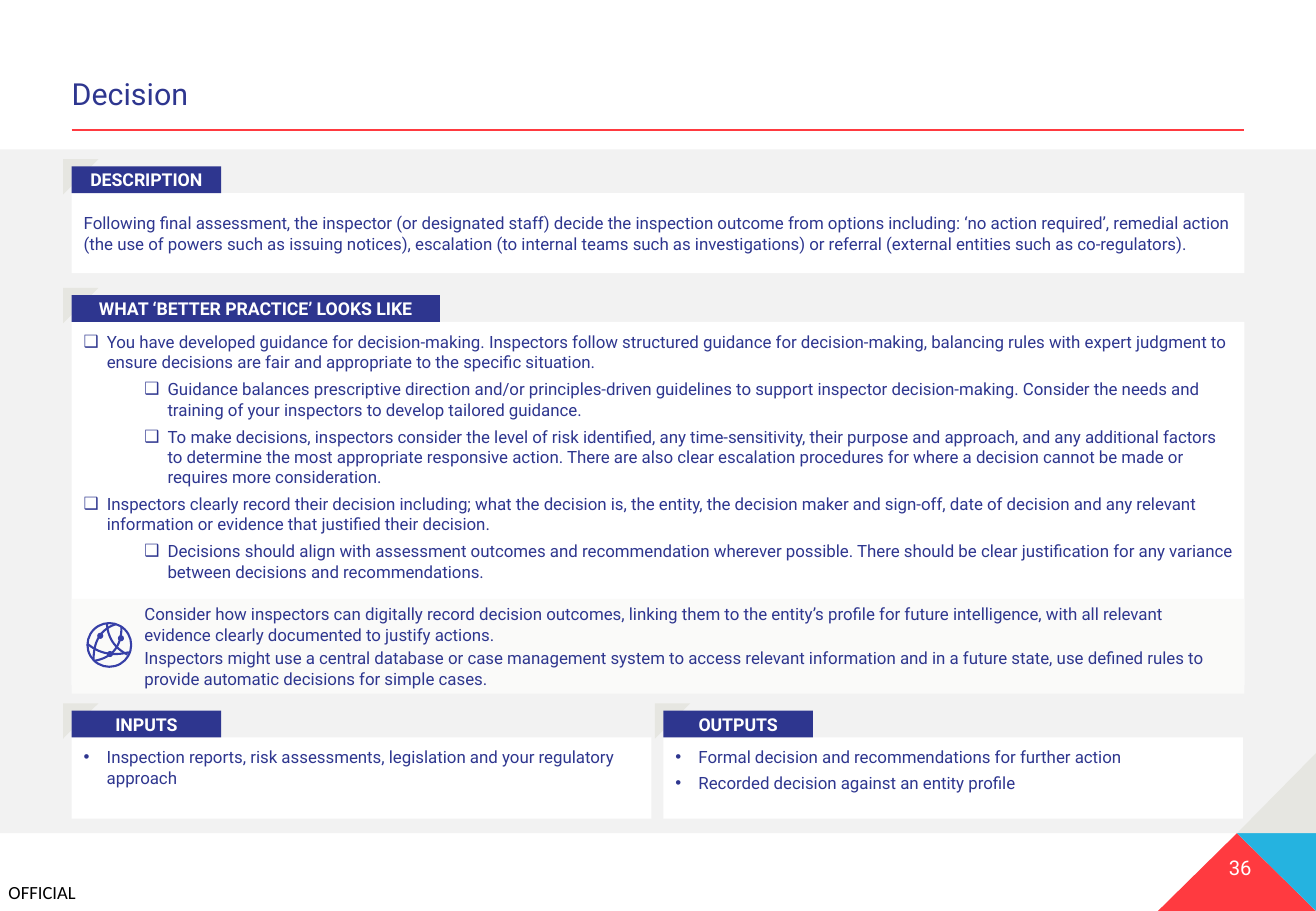
from dataclasses import dataclass

from lxml.etree import SubElement as Sub
from pptx import Presentation
from pptx.dml.color import RGBColor as Rgb
from pptx.enum.shapes import MSO_CONNECTOR as Link, MSO_SHAPE as Form
from pptx.enum.text import MSO_ANCHOR as Anchor, PP_ALIGN as Align
from pptx.oxml.ns import qn
from pptx.shapes.autoshape import Shape
from pptx.shapes.shapetree import SlideShapes as Shapes
from pptx.text.text import TextFrame as Frame
from pptx.util import Inches, Pt

Point = tuple[float, float]
Box = tuple[float, float, float, float]


@dataclass(frozen=True)
class Theme:
    navy: str = "2E368F"
    icon: str = "363FA7"
    red: str = "FF3A40"
    cyan: str = "25B3E0"
    stone: str = "E6E6E1"
    grey: str = "F2F2F2"
    pale: str = "FAFAF9"
    white: str = "FFFFFF"
    black: str = "000000"
    font: str = "Roboto"
    plain: str = "Calibri"
    title: float = 18
    page: float = 12
    mark: float = 11
    tag: float = 10.5
    body: float = 10


@dataclass(frozen=True)
class Style:
    size: float
    color: str
    font: str = "Roboto"
    bold: bool = False


@dataclass(frozen=True)
class Item:
    text: str
    bullet: str = ""
    level: int = 0
    left: float = 0
    hang: float = 0
    before: float = 0
    after: float = 0
    align: Align = Align.LEFT


@dataclass(frozen=True)
class Panel:
    name: str
    x: float
    y: float
    tag: float
    width: float
    height: float
    items: list[Item]
    anchor: Anchor = Anchor.TOP


T = Theme()
BODY = Style(T.body, T.navy)
LEFT, WIDE, HALF, RIGHT = 0.59, 9.65, 4.77, 5.46
TAG_H = 0.22
EDGE, TOP, BASE, SIDE = 10.83, 6.86, 7.5, 10.18


def check(text: str, level: int = 0) -> Item:
    return Item(text, "❑", level, 0.19 + level * 0.5, -0.19, before=4)


def point(text: str) -> Item:
    return Item(text, "•", 0, 0.19, -0.19, after=3)


def note(text: str) -> Item:
    return Item(text, level=1, left=0.5, after=2)


PANELS = [
    Panel("DESCRIPTION", LEFT, 1.37, 1.23, WIDE, 0.66, [
        Item("Following final assessment, the inspector (or designated staff) decide the inspection outcome from options including: ‘no action required’, remedial action (the use of powers such as issuing notices), escalation (to internal teams such as investigations) or referral (external entities such as co-regulators).", after=3),
    ], Anchor.MIDDLE),
    Panel("WHAT ‘BETTER PRACTICE’ LOOKS LIKE", LEFT, 2.43, 3.03, WIDE, 2.99, [
        check("You have developed guidance for decision-making. Inspectors follow structured guidance for decision-making, balancing rules with expert judgment to ensure decisions are fair and appropriate to the specific situation."),
        check("Guidance balances prescriptive direction and/or principles-driven guidelines to support inspector decision-making. Consider the needs and training of your inspectors to develop tailored guidance.", 1),
        check("To make decisions, inspectors consider the level of risk identified, any time-sensitivity, their purpose and approach, and any additional factors to determine the most appropriate responsive action. There are also clear escalation procedures for where a decision cannot be made or requires more consideration.", 1),
        check("Inspectors clearly record their decision including; what the decision is, the entity, the decision maker and sign-off, date of decision and any relevant information or evidence that justified their decision."),
        check("Decisions should align with assessment outcomes and recommendation wherever possible. There should be clear justification for any variance between decisions and recommendations.", 1),
    ]),
    Panel("INPUTS", LEFT, 5.85, 1.23, HALF, 0.67, [
        point("Inspection reports, risk assessments, legislation and your regulatory approach"),
    ]),
    Panel("OUTPUTS", RIGHT, 5.85, 1.23, HALF, 0.67, [
        point("Formal decision and recommendations for further action"),
        point("Recorded decision against an entity profile"),
    ]),
]
NOTES = [
    note("Consider how inspectors can digitally record decision outcomes, linking them to the entity’s profile for future intelligence, with all relevant evidence clearly documented to justify actions."),
    note("Inspectors might use a central database or case management system to access relevant information and in a future state, use defined rules to provide automatic decisions for simple cases."),
]
CORNER = [
    (T.red, [(SIDE, TOP), (9.53, BASE), (EDGE, BASE)]),
    (T.cyan, [(EDGE, TOP), (SIDE, TOP), (EDGE, BASE)]),
    (T.stone, [(EDGE, 6.2), (SIDE, TOP), (EDGE, TOP)]),
]
ARCS = [
    [(0.95, 5.14), (0.77, 5.2), (0.77, 5.43)],
    [(1.0, 5.16), (1.0, 5.4), (0.78, 5.44)],
    [(0.72, 5.3), (0.86, 5.42), (1.06, 5.37)],
    [(0.88, 5.13), (0.89, 5.31), (1.05, 5.39)],
]
DOTS = [(0.82, 5.23), (0.99, 5.25), (0.9, 5.38)]


def write(frame: Frame, items: list[Item], style: Style, anchor: Anchor, pad: Point) -> None:
    frame.word_wrap = True
    frame.vertical_anchor = anchor
    frame.margin_left = frame.margin_right = Inches(pad[0])
    frame.margin_top = frame.margin_bottom = Inches(pad[1])
    for num, item in enumerate(items):
        para = frame.add_paragraph() if num else frame.paragraphs[0]
        para.text = item.text
        para.level = item.level
        para.alignment = item.align
        para.space_before = Pt(item.before if num else 0)
        para.space_after = Pt(item.after)
        props = para._p.get_or_add_pPr()
        props.set("marL", str(Inches(item.left)))
        props.set("indent", str(Inches(item.hang)))
        if item.bullet:
            Sub(props, qn("a:buFont")).set("typeface", "Arial")
            Sub(props, qn("a:buChar")).set("char", item.bullet)
        for run in para.runs:
            run.font.name = style.font
            run.font.size = Pt(style.size)
            run.font.bold = style.bold
            run.font.color.rgb = Rgb.from_string(style.color)


def paint(shape: Shape, fill: str = "", line: str = "") -> Shape:
    shape.shadow.inherit = False
    if fill:
        shape.fill.solid()
        shape.fill.fore_color.rgb = Rgb.from_string(fill)
    else:
        shape.fill.background()
    if line:
        shape.line.color.rgb = Rgb.from_string(line)
        shape.line.width = Pt(1.25)
    else:
        shape.line.fill.background()
    return shape


def draw(shapes: Shapes, form: Form, box: Box, fill: str = "", line: str = "") -> Shape:
    return paint(shapes.add_shape(form, *map(Inches, box)), fill, line)


def trace(shapes: Shapes, points: list[Point], fill: str = "", line: str = "") -> Shape:
    first, *rest = [(Inches(x), Inches(y)) for x, y in points]
    path = shapes.build_freeform(*first)
    path.add_line_segments(rest, close=bool(fill))
    return paint(path.convert_to_shape(), fill, line)


def label(shapes: Shapes, box: Box, item: Item, style: Style, anchor: Anchor, pad: float) -> Frame:
    frame = shapes.add_textbox(*map(Inches, box)).text_frame
    write(frame, [item], style, anchor, (0, pad))
    return frame


def curve(start: Point, bend: Point, end: Point, steps: int = 16) -> list[Point]:
    parts = [num / steps for num in range(steps + 1)]
    return [tuple((1 - t) ** 2 * a + 2 * t * (1 - t) * b + t * t * c
                  for a, b, c in zip(start, bend, end)) for t in parts]


def section(shapes: Shapes, panel: Panel) -> None:
    box = (panel.x, panel.y + TAG_H, panel.width, panel.height)
    body = draw(shapes, Form.RECTANGLE, box, T.white)
    write(body.text_frame, panel.items, BODY, panel.anchor, (0.1, 0.08))
    half = draw(shapes, Form.HALF_FRAME, (panel.x - 0.07, panel.y - 0.06, 0.29, 0.29), T.stone)
    half.adjustments[0] = half.adjustments[1] = 0.238
    tag = draw(shapes, Form.RECTANGLE, (panel.x, panel.y, panel.tag, TAG_H), T.navy)
    write(tag.text_frame, [Item(panel.name, align=Align.CENTER)],
          Style(T.tag, T.white, bold=True), Anchor.MIDDLE, (0.1, 0.05))


def globe(shapes: Shapes) -> None:
    draw(shapes, Form.OVAL, (0.72, 5.13, 0.36, 0.36), line=T.icon)
    for arc in ARCS:
        trace(shapes, curve(*arc), line=T.icon)
    for x, y in DOTS:
        draw(shapes, Form.OVAL, (x - 0.02, y - 0.02, 0.05, 0.05), T.icon)


def main() -> None:
    deck = Presentation()
    deck.slide_width, deck.slide_height = Inches(EDGE), Inches(BASE)
    shapes = deck.slides.add_slide(deck.slide_layouts[6]).shapes
    label(shapes, (0.07, 7.25, 0.7, 0.18), Item("OFFICIAL"), Style(T.mark, T.black, T.plain), Anchor.TOP, 0)
    draw(shapes, Form.RECTANGLE, (0, 1.23, EDGE, 5.63), T.grey)
    for fill, points in CORNER:
        trace(shapes, points, fill)
    label(shapes, (9.43, 6.99, 0.87, 0.3), Item("36", align=Align.RIGHT), Style(T.page, T.white), Anchor.TOP, 0.05)
    rule = shapes.add_connector(Link.STRAIGHT, *map(Inches, (LEFT, 1.07, LEFT + WIDE, 1.07)))
    rule.line.color.rgb = Rgb.from_string(T.red)
    rule.line.width = Pt(1.25)
    Sub(rule._element.spPr, qn("a:effectLst"))
    title = label(shapes, (LEFT, 0.59, WIDE, 0.38), Item("Decision"), Style(T.title, T.navy), Anchor.BOTTOM, 0.05)
    title.paragraphs[0].line_spacing = 0.9
    for panel in PANELS:
        section(shapes, panel)
    band = draw(shapes, Form.RECTANGLE, (LEFT, 4.93, WIDE, 0.78), T.pale)
    write(band.text_frame, NOTES, BODY, Anchor.MIDDLE, (0.1, 0.08))
    globe(shapes)
    deck.save("out.pptx")


if __name__ == "__main__":
    main()
